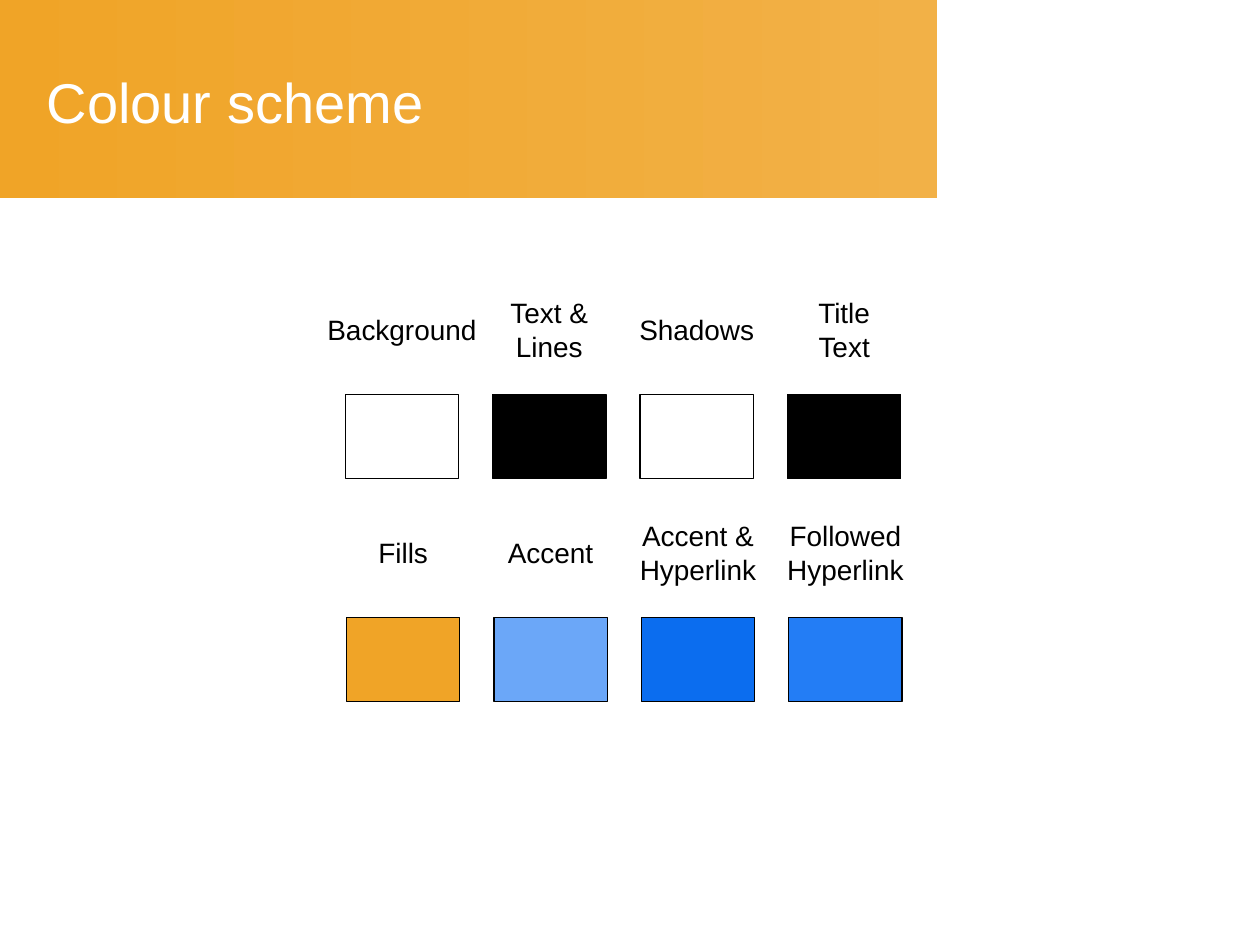
from dataclasses import dataclass

from pptx import Presentation
from pptx.dml.color import RGBColor
from pptx.enum.shapes import MSO_SHAPE as Preset
from pptx.enum.text import MSO_ANCHOR as Anchor, MSO_AUTO_SIZE as AutoSize, PP_ALIGN as Align
from pptx.slide import Slide
from pptx.util import Inches, Pt

WHITE, BLACK, ORANGE, PALE_ORANGE = "FFFFFF", "000000", "F0A427", "F2B147"
COLUMN_PITCH = 1.17
SWATCH_WIDTH, SWATCH_HEIGHT = 0.9, 0.67
LABEL_HEIGHTS = {1: 0.37, 2: 0.64}


@dataclass
class Swatch:
    label: str
    label_width: float
    fill: str


@dataclass
class SwatchRow:
    left: float
    top: float
    label_middle: float
    swatches: list[Swatch]


ROWS = [
    SwatchRow(2.74, 3.13, 2.62, [
        Swatch("Background", 1.4, WHITE),
        Swatch("Text &\nLines", 0.86, BLACK),
        Swatch("Shadows", 1.14, WHITE),
        Swatch("Title\vText", 0.66, BLACK),
    ]),
    SwatchRow(2.75, 4.9, 4.39, [
        Swatch("Fills", 0.64, ORANGE),
        Swatch("Accent", 0.92, "6BA7F8"),
        Swatch("Accent &\nHyperlink", 1.16, "0B6DEF"),
        Swatch("Followed\nHyperlink", 1.16, "237DF5"),
    ]),
]


def colour(value: str) -> RGBColor:
    return RGBColor.from_string(value)


def apply_format(target, values: dict) -> None:
    for name, value in values.items():
        setattr(target, name, value)


def format_text(frame, size: int, text_colour: str, alignment: Align) -> None:
    for paragraph in frame.paragraphs:
        paragraph.alignment = alignment
        apply_format(paragraph.font, {"name": "Arial", "size": Pt(size)})
        paragraph.font.color.rgb = colour(text_colour)


def add_rectangle(slide: Slide, left: float, top: float, width: float, height: float):
    shape = slide.shapes.add_shape(
        Preset.RECTANGLE, Inches(left), Inches(top), Inches(width), Inches(height))
    shape.shadow.inherit = False
    return shape


def add_banner(slide: Slide) -> None:
    banner = add_rectangle(slide, 0, 0, 7.44, 1.57)
    banner.line.fill.background()
    banner.fill.gradient()
    banner.fill.gradient_angle = 0
    for stop, value in zip(banner.fill.gradient_stops, (ORANGE, PALE_ORANGE)):
        stop.color.rgb = colour(value)
    slide.shapes.element.insert(2, banner.element)


def add_title(slide: Slide) -> None:
    title = slide.shapes.title
    apply_format(title, {"left": Inches(0.27), "top": Inches(0.3),
                         "width": Inches(7.48), "height": Inches(1.01)})
    frame = title.text_frame
    frame.text = "Colour scheme"
    apply_format(frame, {"vertical_anchor": Anchor.MIDDLE, "auto_size": AutoSize.NONE})
    format_text(frame, 32, WHITE, Align.LEFT)


def add_swatch(slide: Slide, swatch: Swatch, left: float, top: float) -> None:
    shape = add_rectangle(slide, left, top, SWATCH_WIDTH, SWATCH_HEIGHT)
    shape.fill.solid()
    shape.fill.fore_color.rgb = colour(swatch.fill)
    shape.line.color.rgb = colour(BLACK)
    shape.line.width = Pt(0.75)


def add_label(slide: Slide, swatch: Swatch, centre: float, middle: float) -> None:
    height = LABEL_HEIGHTS[len(swatch.label.splitlines())]
    box = slide.shapes.add_textbox(
        Inches(centre - swatch.label_width / 2), Inches(middle - height / 2),
        Inches(swatch.label_width), Inches(height))
    frame = box.text_frame
    frame.text = swatch.label
    apply_format(frame, {"word_wrap": False, "auto_size": AutoSize.SHAPE_TO_FIT_TEXT})
    format_text(frame, 16, BLACK, Align.CENTER)


def main() -> None:
    presentation = Presentation()
    apply_format(presentation, {"slide_width": Inches(10), "slide_height": Inches(7.5)})
    slide = presentation.slides.add_slide(presentation.slide_layouts[5])
    add_title(slide)
    add_banner(slide)
    for row in ROWS:
        for column, swatch in enumerate(row.swatches):
            left = row.left + column * COLUMN_PITCH
            add_swatch(slide, swatch, left, row.top)
            add_label(slide, swatch, left + SWATCH_WIDTH / 2, row.label_middle)
    presentation.save("out.pptx")


if __name__ == "__main__":
    main()
